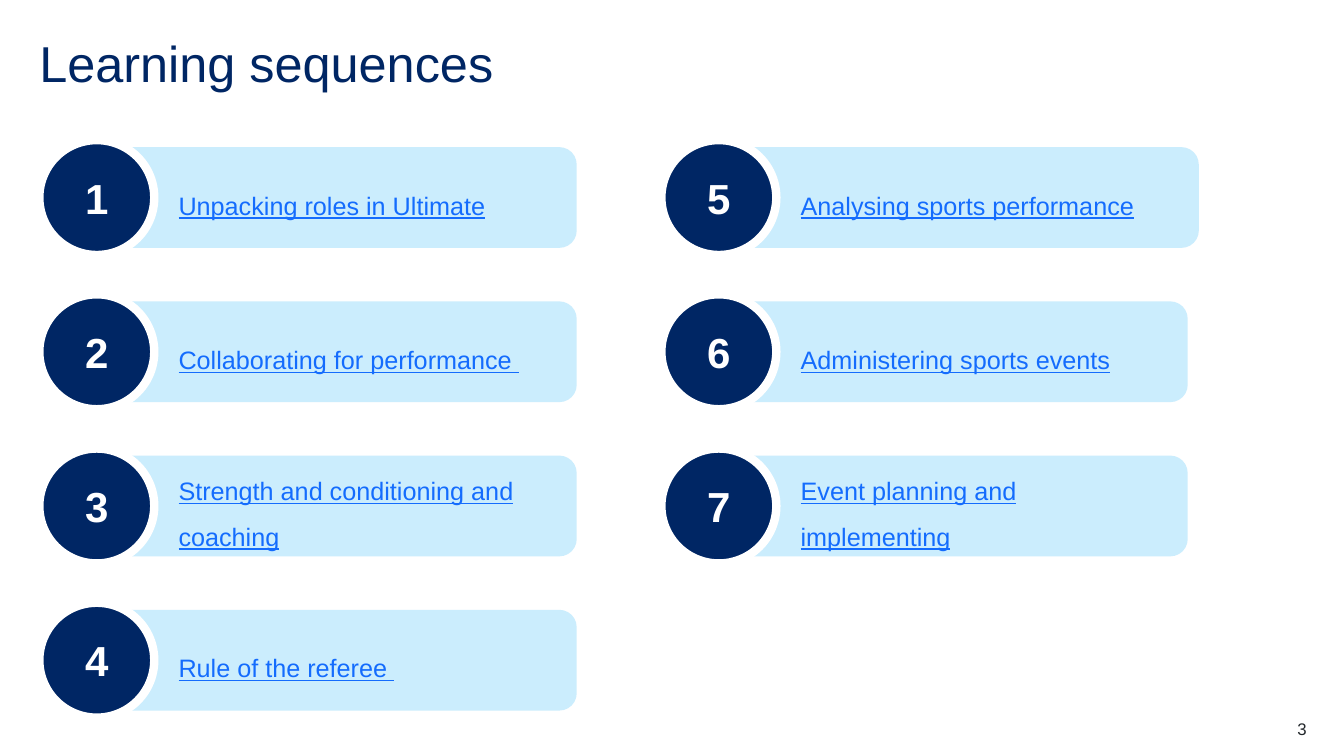
from dataclasses import dataclass

from pptx import Presentation
from pptx.dml.color import RGBColor
from pptx.enum.shapes import MSO_SHAPE as Preset
from pptx.enum.text import MSO_ANCHOR as Anchor, PP_ALIGN as Align
from pptx.shapes.autoshape import Shape
from pptx.slide import Slide
from pptx.util import Inches, Pt

COLOURS = {
    "navy": "002664",
    "sky": "CBEDFD",
    "link": "146CFD",
    "white": "FFFFFF",
    "ink": "22272B",
}
FONT = "Arial"
ROWS_PER_COLUMN = 4
LEFT, TOP = 0.39, 1.39
COLUMN_PITCH, ROW_PITCH = 6.17, 1.53
BADGE_SIZE = 1.14
BAR_OFFSET_X, BAR_OFFSET_Y, BAR_HEIGHT = 0.74, 0.07, 1


@dataclass(frozen=True)
class Sequence:
    label: str
    bar_width: float = 4.59


SEQUENCES = [
    Sequence("Unpacking roles in Ultimate"),
    Sequence("Collaborating for performance "),
    Sequence("Strength and conditioning and coaching"),
    Sequence("Rule of the referee "),
    Sequence("Analysing sports performance"),
    Sequence("Administering sports events", 4.48),
    Sequence("Event planning and implementing", 4.48),
]


def colour(name: str) -> RGBColor:
    return RGBColor.from_string(COLOURS[name])


def write_text(
    box: Shape,
    text: str,
    *,
    size: float,
    ink: str,
    align: Align = Align.LEFT,
    anchor: Anchor = Anchor.TOP,
    insets: tuple[float, float, float, float] = (0, 0, 0, 0),
    spacing: float = 1.0,
    indent: float = 0,
    bold: bool = False,
    underline: bool = False,
) -> None:
    """Fill a box with one paragraph; insets run left, top, right, bottom."""
    frame = box.text_frame
    frame.word_wrap = True
    frame.vertical_anchor = anchor
    (frame.margin_left, frame.margin_top,
     frame.margin_right, frame.margin_bottom) = map(Inches, insets)
    para = frame.paragraphs[0]
    para.alignment = align
    para.line_spacing = spacing
    if indent:
        properties = para._p.get_or_add_pPr()
        properties.set("marL", str(Inches(indent)))
        properties.set("indent", "0")
    span = para.add_run()
    span.text = text
    font = span.font
    font.name, font.size = FONT, Pt(size)
    font.bold, font.underline = bold, underline
    font.color.rgb = colour(ink)


def add_text_box(page: Slide, left: float, top: float, width: float,
                 height: float) -> Shape:
    return page.shapes.add_textbox(
        Inches(left), Inches(top), Inches(width), Inches(height))


def add_sequence(page: Slide, index: int, sequence: Sequence) -> None:
    """Draw a labelled bar with its numbered badge as one group."""
    column, row = divmod(index, ROWS_PER_COLUMN)
    left, top = LEFT + column * COLUMN_PITCH, TOP + row * ROW_PITCH
    group = page.shapes.add_group_shape()

    bar = group.shapes.add_shape(
        Preset.ROUNDED_RECTANGLE,
        Inches(left + BAR_OFFSET_X), Inches(top + BAR_OFFSET_Y),
        Inches(sequence.bar_width), Inches(BAR_HEIGHT))
    bar.adjustments[0] = 0.173
    bar.line.fill.background()
    write_text(bar, sequence.label, size=18, ink="link", underline=True,
               anchor=Anchor.MIDDLE, insets=(0.2, 0.05, 0.12, 0.05),
               spacing=1.5, indent=0.39)

    badge = group.shapes.add_shape(
        Preset.OVAL, Inches(left), Inches(top),
        Inches(BADGE_SIZE), Inches(BADGE_SIZE))
    badge.line.color.rgb = colour("white")
    badge.line.width = Pt(6)
    write_text(badge, str(index + 1), size=30, ink="white", bold=True,
               align=Align.CENTER, anchor=Anchor.MIDDLE,
               insets=(0.1, 0.05, 0.1, 0.05))

    for shape, fill in ((bar, "sky"), (badge, "navy")):
        shape.shadow.inherit = False
        shape.fill.solid()
        shape.fill.fore_color.rgb = colour(fill)


def main() -> None:
    deck = Presentation()
    deck.slide_width, deck.slide_height = Inches(13.33), Inches(7.5)
    page = deck.slides.add_slide(deck.slide_layouts[6])

    title = add_text_box(page, LEFT, 0.39, 12.56, 0.6)
    write_text(title, "Learning sequences", size=36, ink="navy", spacing=0.9)
    for index, sequence in enumerate(SEQUENCES):
        add_sequence(page, index, sequence)
    page_number = add_text_box(page, 12.17, 7.13, 0.79, 0.2)
    write_text(page_number, "3", size=12, ink="ink", align=Align.RIGHT)

    deck.save("out.pptx")


if __name__ == "__main__":
    main()
